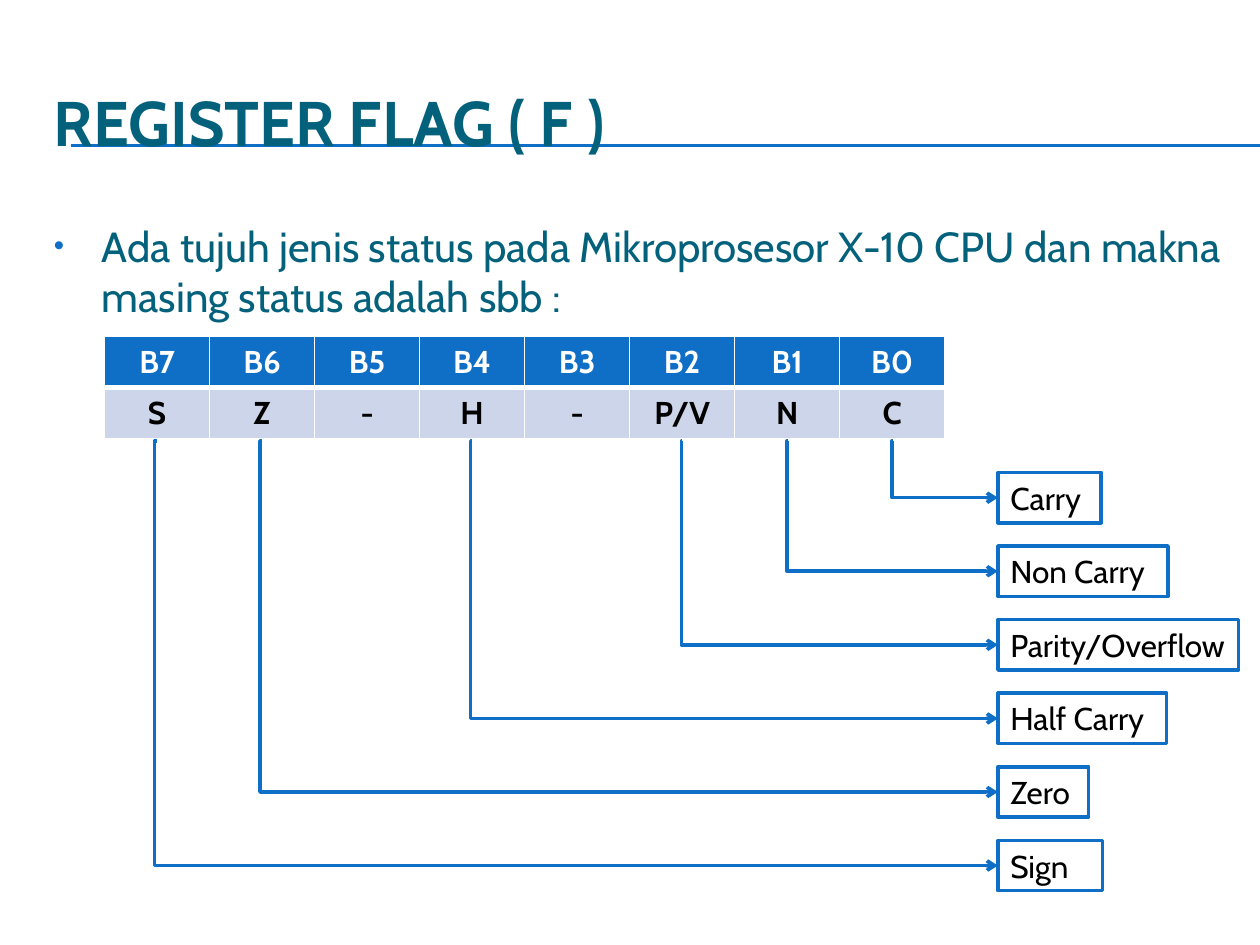
from dataclasses import dataclass

from lxml import etree
from pptx import Presentation
from pptx.dml.color import RGBColor
from pptx.enum.shapes import MSO_CONNECTOR, MSO_SHAPE
from pptx.enum.text import MSO_ANCHOR, MSO_AUTO_SIZE, PP_ALIGN
from pptx.oxml.ns import qn
from pptx.util import Inches, Pt

STRAIGHT, ELBOW = MSO_CONNECTOR.STRAIGHT, MSO_CONNECTOR.ELBOW
RECT = MSO_SHAPE.RECTANGLE
TOP, MIDDLE = MSO_ANCHOR.TOP, MSO_ANCHOR.MIDDLE
LEFT, CENTER = PP_ALIGN.LEFT, PP_ALIGN.CENTER
GROW = MSO_AUTO_SIZE.SHAPE_TO_FIT_TEXT


@dataclass(frozen=True)
class Theme:
    """Colours, font and type sizes of the slide."""
    font: str = "Cabin"
    accent: str = "0F6FC6"
    heading: str = "04617B"
    band: str = "CCD5EA"
    white: str = "FFFFFF"
    black: str = "000000"
    title_size: int = 36
    body_size: int = 24
    label_size: int = 18


THEME = Theme()
BITS = ["B7", "B6", "B5", "B4", "B3", "B2", "B1", "B0"]
FLAGS = ["S", "Z", "-", "H", "-", "P/V", "N", "C"]
MEANINGS = [("C", "Carry", 0.82), ("N", "Non Carry", 1.35),
            ("P/V", "Parity/Overflow", 1.91), ("H", "Half Carry", 1.34),
            ("Z", "Zero", 0.72), ("S", "Sign", 0.83)]


def rgb(value):
    """Return the colour for a hex string."""
    return RGBColor.from_string(value)


def add_child(parent, tag, **attrs):
    """Append an XML element with attributes."""
    return etree.SubElement(parent, qn(tag), attrs)


def write(tf, text, size, color, bold=False, align=LEFT, anchor=TOP, wrap=True):
    """Put one formatted paragraph in a text frame and return it."""
    tf.word_wrap = wrap
    tf.vertical_anchor = anchor
    p = tf.paragraphs[0]
    p.alignment = align
    r = p.add_run()
    r.text = text
    r.font.name = THEME.font
    r.font.size = Pt(size)
    r.font.bold = bold
    r.font.color.rgb = rgb(color)
    return p


def add_line(s, kind, start, end, width):
    """Draw a flat accent connector between two points in inches."""
    line = s.shapes.add_connector(kind, *map(Inches, start + end))
    line.line.color.rgb = rgb(THEME.accent)
    line.line.width = Pt(width)
    add_child(line._element.spPr, "a:effectLst")
    return line


def add_title(s, x, y, w, h):
    """Place the title and the double rule running to the slide edge."""
    for rule_y in (y + 0.65, y + 0.66):
        add_line(s, STRAIGHT, (0.56, rule_y), (10, rule_y), 0.75)
    box = s.shapes.add_textbox(*map(Inches, (x, y, w, h)))
    write(box.text_frame, "REGISTER FLAG ( F )", THEME.title_size,
          THEME.heading, bold=True, anchor=MIDDLE)


def add_body(s, x, y, w, h):
    """Place the bulleted introduction."""
    box = s.shapes.add_textbox(*map(Inches, (x, y, w, h)))
    p = write(box.text_frame,
              "Ada tujuh jenis status pada Mikroprosesor X-10 CPU dan "
              "makna masing status adalah sbb :",
              THEME.body_size, THEME.heading)
    p.space_before = Pt(0.2 * THEME.body_size)
    pPr = p._p.get_or_add_pPr()
    pPr.set("marL", str(Inches(0.38)))
    pPr.set("indent", str(Inches(-0.38)))
    add_child(add_child(pPr, "a:buClr"), "a:srgbClr", val=THEME.accent)
    add_child(pPr, "a:buSzPct", val="70000")
    add_child(pPr, "a:buFont", typeface="Arial")
    add_child(pPr, "a:buChar", char="•")


def set_borders(cell, **widths):
    """Give a cell white borders, with widths in points by side."""
    tcPr = cell._tc.get_or_add_tcPr()
    for side, width in widths.items():
        ln = add_child(tcPr, f"a:ln{side}", w=str(Pt(width)))
        add_child(add_child(ln, "a:solidFill"), "a:srgbClr", val=THEME.white)


def add_register(s, x, y, w, h):
    """Place the table of bits and their flags."""
    rows = [(BITS, THEME.accent, THEME.white), (FLAGS, THEME.band, THEME.black)]
    table = s.shapes.add_table(len(rows), len(BITS),
                               *map(Inches, (x, y, w, h))).table
    for column in table.columns:
        column.width = Inches(w / len(BITS))
    for i, (texts, fill, color) in enumerate(rows):
        table.rows[i].height = Inches(h / len(rows))
        for j, text in enumerate(texts):
            cell = table.cell(i, j)
            set_borders(cell, L=1, R=1, T=1 if i == 0 else 3, B=3 if i == 0 else 1)
            cell.fill.solid()
            cell.fill.fore_color.rgb = rgb(fill)
            write(cell.text_frame, text, THEME.label_size, color,
                  bold=True, align=CENTER)


def add_label(s, text, x, y, w, h):
    """Place one outlined flag meaning."""
    sp = s.shapes.add_shape(RECT, *map(Inches, (x, y, w, h)))
    sp.shadow.inherit = False
    sp.fill.background()
    sp.line.color.rgb = rgb(THEME.accent)
    sp.line.width = Pt(2)
    write(sp.text_frame, text, THEME.label_size, THEME.black, wrap=False)
    sp.text_frame.auto_size = GROW


def add_arrow(s, start, end):
    """Draw an elbow arrow that goes down first and then right."""
    line = add_line(s, ELBOW, start, end, 2)
    avLst = line._element.spPr.find(qn("a:prstGeom")).get_or_add_avLst()
    add_child(avLst, "a:gd", name="adj1", fmla="val -300")
    add_child(line.line._get_or_add_ln(), "a:tailEnd", type="arrow")


def add_meanings(s, x, y, w, h, table_x, table_w):
    """Place the flag meanings and lead an arrow to each from its column."""
    label_h = 0.4
    step = (h - label_h) / (len(MEANINGS) - 1)
    column_w = table_w / len(BITS)
    for i, (flag, text, label_w) in enumerate(MEANINGS):
        top = y + i * step
        column_x = table_x + (FLAGS.index(flag) + 0.5) * column_w
        add_label(s, text, x, top, min(label_w, w), label_h)
        add_arrow(s, (column_x, 3.5), (x, top + label_h / 2))


def main():
    """Build and save the slide."""
    prs = Presentation()
    prs.slide_width, prs.slide_height = Inches(10), Inches(7.5)
    s = prs.slides.add_slide(prs.slide_layouts[6])
    add_title(s, 0.33, 0.5, 9.5, 0.92)
    add_body(s, 0.33, 1.7, 9.5, 4.95)
    add_register(s, 0.83, 2.67, 6.67, 0.81)
    add_meanings(s, 7.92, 3.75, 1.91, 3.32, table_x=0.83, table_w=6.67)
    prs.save("out.pptx")


if __name__ == "__main__":
    main()
